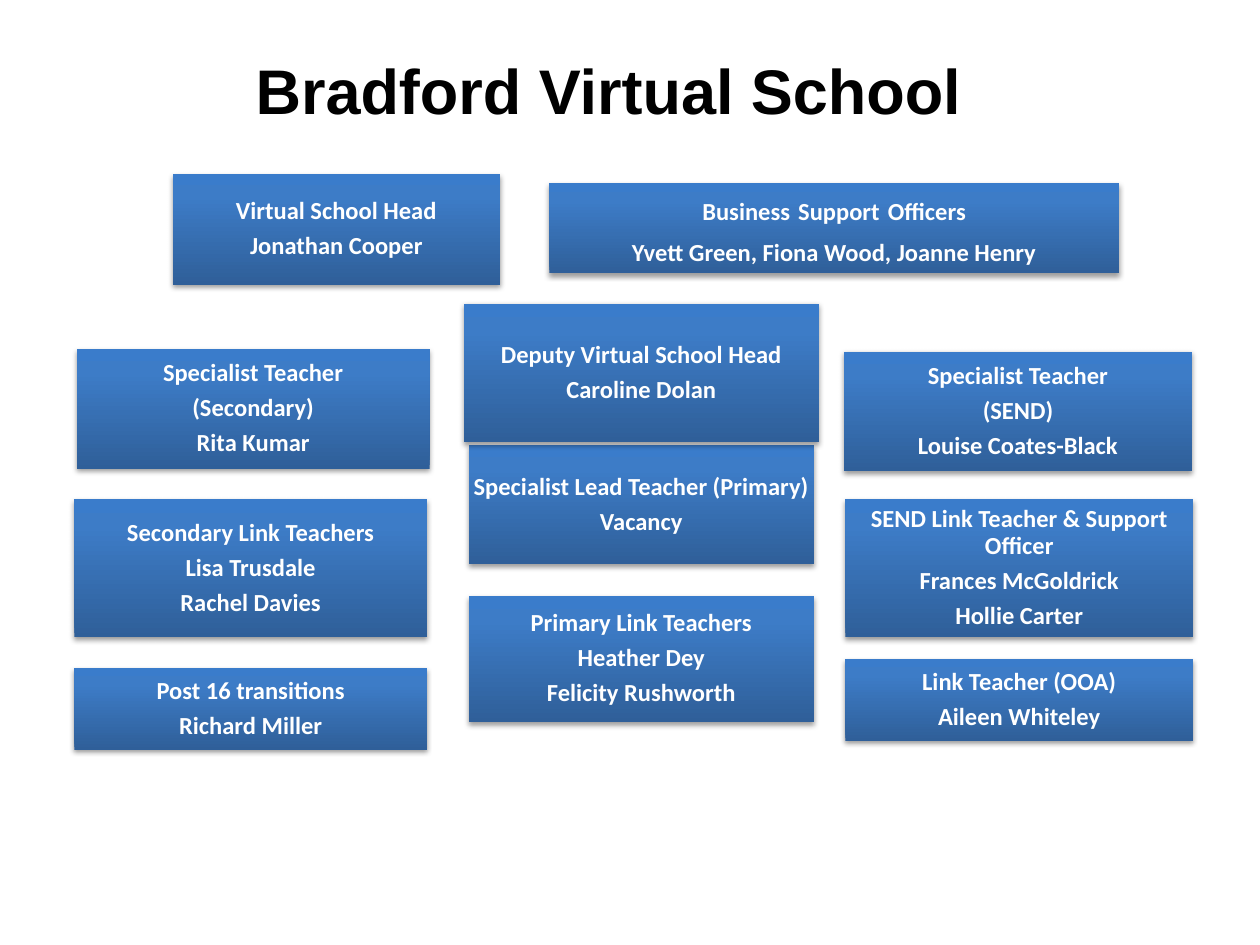
"""Build the Bradford Virtual School staff structure slide."""
from copy import deepcopy
from dataclasses import dataclass

from lxml import etree
from pptx import Presentation
from pptx.dml.color import RGBColor
from pptx.enum.shapes import MSO_SHAPE
from pptx.enum.text import MSO_ANCHOR, PP_ALIGN
from pptx.oxml.ns import qn
from pptx.util import Inches, Pt

RECTANGLE = MSO_SHAPE.RECTANGLE
MIDDLE = MSO_ANCHOR.MIDDLE
CENTER = PP_ALIGN.CENTER


@dataclass(frozen=True)
class Theme:
    title_font: str = "Arial"
    role_font: str = "Calibri"
    title_size: int = 36
    role_size: int = 14
    gap_size: int = 20
    title_color: str = "000000"
    role_color: str = "FFFFFF"
    shadow_color: str = "000000"
    gradient: tuple = ((0, "2F5F99"), (0.8, "3D7CC7"), (1, "3A7CCB"))
    line_spacing: float = 0.9
    space_after: float = 0.35


THEME = Theme()
LEFT, CENTRE, RIGHT = (0.59, 2.8), (3.72, 2.74), (6.71, 2.76)

ROLES = [
    ((1.37, 2.6), 1.38, 0.88, ["Virtual School Head", "Jonathan Cooper"]),
    (CENTRE, 3.53, 0.95, ["Specialist Lead Teacher (Primary)", "Vacancy"]),
    (CENTRE, 4.73, 1.0, ["Primary Link Teachers", "Heather Dey", "Felicity Rushworth"]),
    ((0.61, 2.8), 2.77, 0.95, ["Specialist Teacher", "(Secondary)", "Rita Kumar"]),
    (LEFT, 3.96, 1.1, ["Secondary Link Teachers", "Lisa Trusdale", "Rachel Davies"]),
    ((6.7, 2.76), 2.79, 0.95, ["Specialist Teacher", "(SEND)", "Louise Coates-Black"]),
    (RIGHT, 3.96, 1.1, ["SEND Link Teacher & Support Officer", "Frances McGoldrick", "Hollie Carter"]),
    ((3.68, 2.82), 2.41, 1.1, ["Deputy Virtual School Head", "Caroline Dolan"]),
    ((4.36, 4.52), 1.45, 0.72, ["Business Support Officers", "Yvett Green, Fiona Wood, Joanne Henry"]),
    (RIGHT, 5.23, 0.65, ["Link Teacher (OOA)", "Aileen Whiteley"]),
    (LEFT, 5.3, 0.65, ["Post 16 transitions", "Richard Miller"]),
]
WIDE_SPACED = "Business Support Officers"


def style_run(run, font, size, color):
    run.font.name = font
    run.font.size = Pt(size)
    run.font.bold = True
    run.font.color.rgb = RGBColor.from_string(color)


def paint_box(box):
    box.line.fill.background()
    box.fill.gradient()
    box.fill.gradient_angle = 90
    stop_list = next(box._element.spPr.iter(qn("a:gsLst")))
    stop_list.insert(1, deepcopy(stop_list[0]))
    for stop, (position, color) in zip(box.fill.gradient_stops, THEME.gradient):
        stop.position = position
        stop.color.rgb = RGBColor.from_string(color)
    box.shadow.inherit = False
    effects = box._element.spPr.find(qn("a:effectLst"))
    shadow = etree.SubElement(
        effects, qn("a:outerShdw"), blurRad=str(Pt(3.1)), dist=str(Pt(1.6)),
        dir="5400000", rotWithShape="0")
    shade = etree.SubElement(shadow, qn("a:srgbClr"), val=THEME.shadow_color)
    etree.SubElement(shade, qn("a:alpha"), val="38000")


prs = Presentation()
prs.slide_width, prs.slide_height = Inches(10), Inches(7.5)
slide = prs.slides.add_slide(prs.slide_layouts[6])

title = slide.shapes.add_textbox(Inches(1.93), Inches(0.36), Inches(6.93), Inches(0.71))
title.text_frame.word_wrap = True
title.text_frame.text = "Bradford Virtual School"
style_run(title.text_frame.paragraphs[0].runs[0], THEME.title_font, THEME.title_size, THEME.title_color)

for (left, width), top, height, lines in ROLES:
    role = slide.shapes.add_shape(RECTANGLE, Inches(left), Inches(top), Inches(width), Inches(height))
    paint_box(role)
    frame = role.text_frame
    frame.word_wrap = True
    frame.vertical_anchor = MIDDLE
    frame.margin_left = frame.margin_right = Inches(0.01)
    frame.margin_top = frame.margin_bottom = Inches(0.01)
    frame.text = "\n".join(lines)
    for paragraph, line in zip(frame.paragraphs, lines):
        largest = THEME.role_size
        if line == WIDE_SPACED:
            largest = THEME.gap_size
            first, *others = line.split()
            paragraph.text = first
            for word in others:
                paragraph.add_run().text = " "
                paragraph.add_run().text = word
        paragraph.alignment = CENTER
        paragraph.line_spacing = THEME.line_spacing
        paragraph.space_after = Pt(largest * THEME.space_after)
        for run in paragraph.runs:
            size = THEME.gap_size if run.text == " " else THEME.role_size
            style_run(run, THEME.role_font, size, THEME.role_color)

prs.save("out.pptx")
